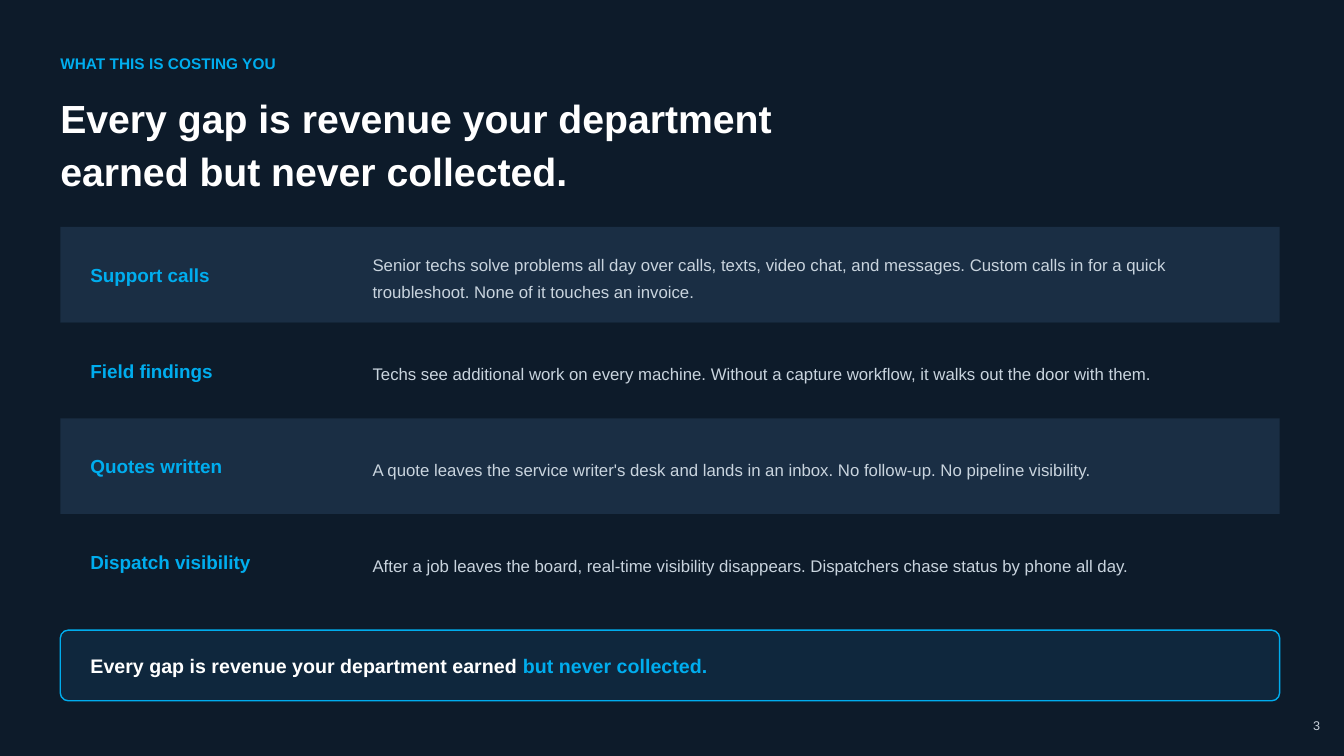
import pptx
import pptx.dml.color
import pptx.enum.shapes
import pptx.enum.text
import pptx.util
from lxml import etree
from pptx.oxml.ns import qn

Cm = pptx.util.Cm
ALIGN = pptx.enum.text.PP_ALIGN
SHAPE = pptx.enum.shapes.MSO_SHAPE

COLORS = {
    "bg": "0D1B2A",
    "band": "1A2E44",
    "accent": "00ADEE",
    "white": "FFFFFF",
    "body": "C9D4DE",
    "number": "C8D0DA",
    "callout": "1F71AD",
}

ROWS = [
    ("Support calls",
     "Senior techs solve problems all day over calls, texts, video chat, and messages. "
     "Custom calls in for a quick troubleshoot. None of it touches an invoice."),
    ("Field findings",
     "Techs see additional work on every machine. "
     "Without a capture workflow, it walks out the door with them."),
    ("Quotes written",
     "A quote leaves the service writer's desk and lands in an inbox. "
     "No follow-up. No pipeline visibility."),
    ("Dispatch visibility",
     "After a job leaves the board, real-time visibility disappears. "
     "Dispatchers chase status by phone all day."),
]


def rgb(name):
    """Return the named colour."""
    return pptx.dml.color.RGBColor.from_string(COLORS[name])


def write(sp, paragraphs, size, bold=False, spacing=1.0, align=ALIGN.LEFT):
    """Fill a shape with paragraphs, each a list of (text, colour) runs."""
    tf = sp.text_frame
    frame_format = {
        "word_wrap": True,
        "auto_size": pptx.enum.text.MSO_AUTO_SIZE.NONE,
        "vertical_anchor": pptx.enum.text.MSO_ANCHOR.MIDDLE,
        "margin_left": 0,
        "margin_top": 0,
        "margin_right": 0,
        "margin_bottom": 0,
    }
    for key, value in frame_format.items():
        setattr(tf, key, value)
    font_format = {"name": "Arial", "size": pptx.util.Pt(size), "bold": bold}
    for i, runs in enumerate(paragraphs):
        p = tf.paragraphs[0] if i == 0 else tf.add_paragraph()
        p.alignment = align
        p.line_spacing = spacing
        for text, color in runs:
            r = p.add_run()
            r.text = text
            for key, value in font_format.items():
                setattr(r.font, key, value)
            r.font.color.rgb = rgb(color)


def add_text(s, box, paragraphs, size, **options):
    """Add a text box in the given box."""
    write(s.shapes.add_textbox(*map(Cm, box)), paragraphs, size, **options)


def add_panel(s, box, kind, fill):
    """Add a filled panel without line or shadow."""
    sp = s.shapes.add_shape(kind, *map(Cm, box))
    sp.shadow.inherit = False
    sp.fill.solid()
    sp.fill.fore_color.rgb = rgb(fill)
    sp.line.fill.background()
    return sp


def add_heading(s, box):
    """Place the kicker and the two-line title."""
    x, y, w, h = box
    add_text(s, (x, y, 20.32, 0.89), [[("WHAT THIS IS COSTING YOU", "accent")]], 11, bold=True)
    sp = s.shapes.title
    place = {"left": x, "top": y + 1.02, "width": w, "height": h - 1.02}
    for key, value in place.items():
        setattr(sp, key, Cm(value))
    lines = ["Every gap is revenue your department", "earned but never collected."]
    write(sp, [[(line, "white")] for line in lines], 28, bold=True, spacing=1.14)


def add_rows(s, box):
    """Stack the banded rows of label and description."""
    x, y, w, h = box
    row_h = h / len(ROWS)
    for i, (label, description) in enumerate(ROWS):
        top = y + i * row_h
        add_panel(s, (x, top, w, row_h), SHAPE.RECTANGLE, "bg" if i % 2 else "band")
        add_text(s, (x + 0.76, top, 6.6, row_h), [[(label, "accent")]], 13.5, bold=True)
        add_text(s, (x + 7.87, top, 22.1, row_h), [[(description, "body")]], 12, spacing=1.33)


def add_callout(s, box):
    """Draw the outlined closing statement."""
    x, y, w, h = box
    sp = add_panel(s, box, SHAPE.ROUNDED_RECTANGLE, "callout")
    sp.adjustments[0] = 0.114
    color = sp._element.spPr.find(qn("a:solidFill")).find(qn("a:srgbClr"))
    etree.SubElement(color, qn("a:alpha")).set("val", "15000")
    sp.line.color.rgb = rgb("accent")
    sp.line.width = pptx.util.Pt(1)
    runs = [("Every gap is revenue your department earned ", "white"),
            ("but never collected.", "accent")]
    add_text(s, (x + 0.76, y, w - 1.52, h), [runs], 14, bold=True)


def main():
    """Build and save the slide."""
    prs = pptx.Presentation()
    prs.slide_width, prs.slide_height = Cm(33.87), Cm(19.05)
    s = prs.slides.add_slide(prs.slide_layouts[5])
    s.background.fill.solid()
    s.background.fill.fore_color.rgb = rgb("bg")
    add_heading(s, (1.52, 1.14, 29.21, 3.81))
    add_rows(s, (1.52, 5.72, 30.73, 9.65))
    add_callout(s, (1.52, 15.88, 30.73, 1.78))
    add_text(s, (32, 17.91, 1.27, 0.76), [[("3", "number")]], 9, align=ALIGN.RIGHT)
    prs.save("out.pptx")


if __name__ == "__main__":
    main()
